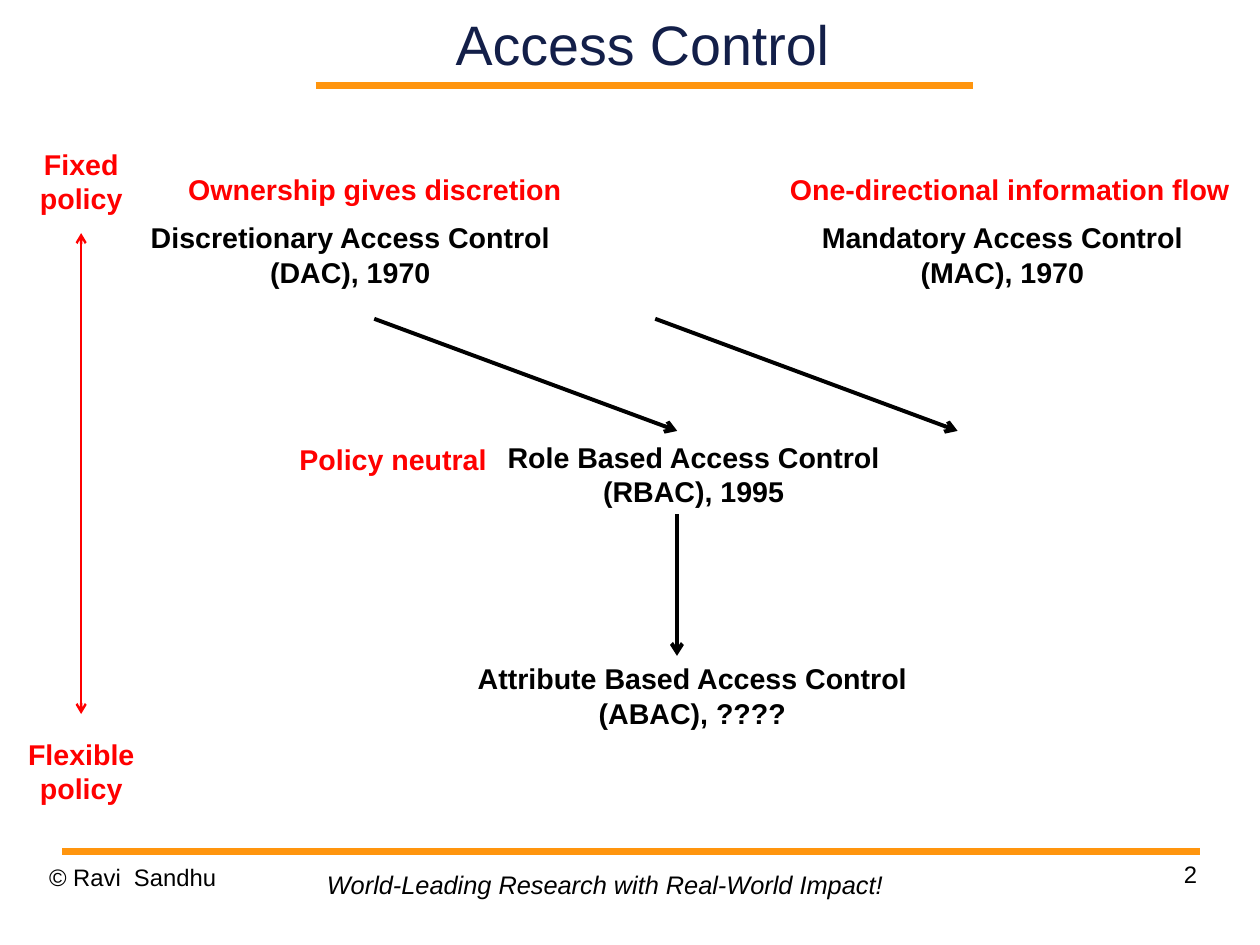
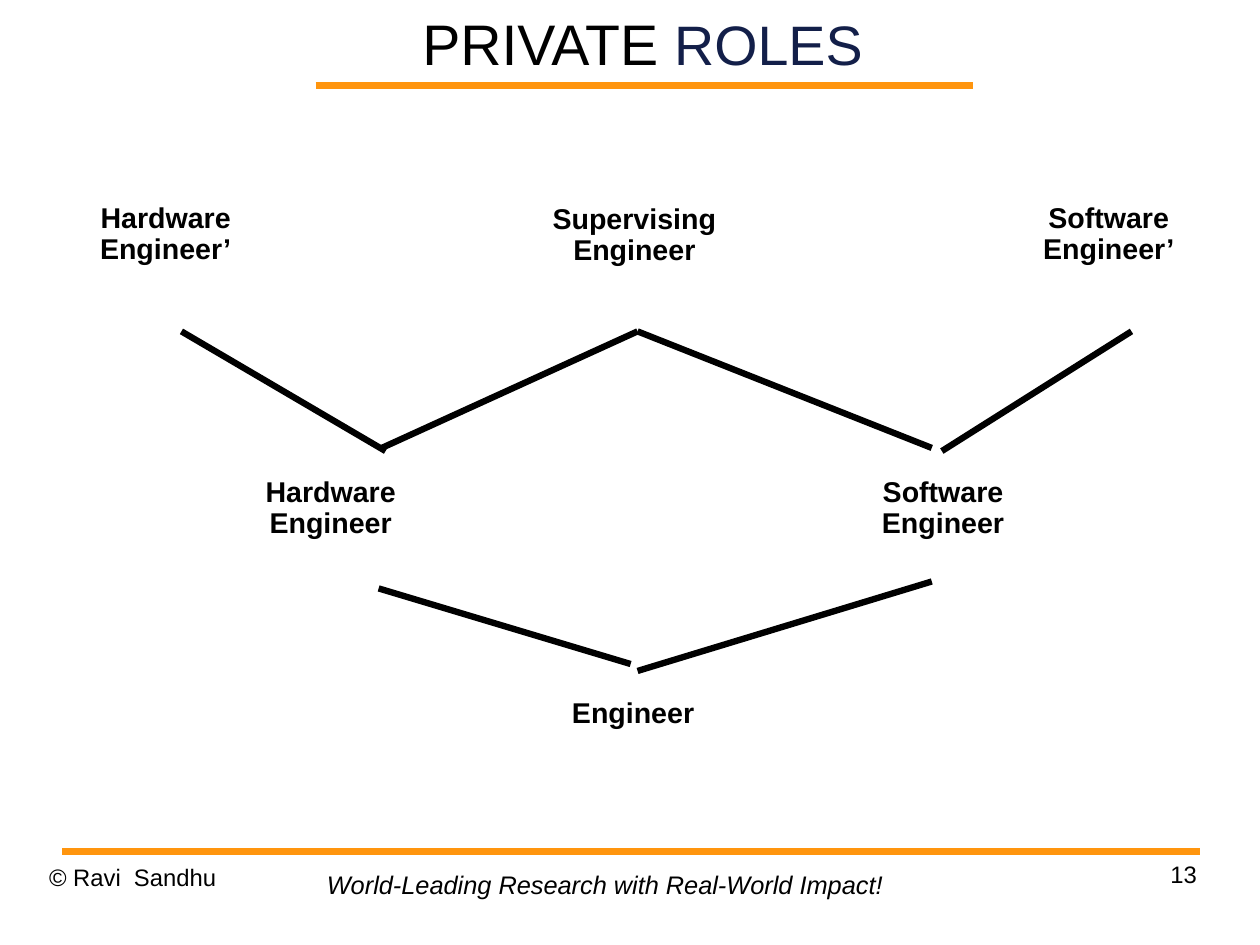
from pptx import Presentation
from pptx.dml.color import RGBColor
from pptx.enum.shapes import MSO_CONNECTOR as Connector
from pptx.enum.text import MSO_ANCHOR as Anchor, MSO_AUTO_SIZE as AutoSize, PP_ALIGN as Align
from pptx.oxml.ns import qn
from pptx.util import Cm, Inches, Pt
from lxml import etree

# Shared look: a grid of 100 columns by 75 rows
WIDTH, HEIGHT = Cm(28), Cm(21)
COLUMNS, ROWS = 100, 75
FONT = "Arial"
BLACK, RED, NAVY, ORANGE = "000000", "FF0000", "131F49", "FF950E"
TITLE_SIZE, LABEL_SIZE = 35, 18
TITLE_ONLY = 5


def color(hex_string):
    return RGBColor.from_string(hex_string)


def across(columns):
    return round(WIDTH * columns / COLUMNS)


def down(rows):
    return round(HEIGHT * rows / ROWS)


def style_font(font, size, hex_color, bold=False, italic=False):
    font.name, font.size = FONT, Pt(size)
    font.bold, font.italic = bold, italic
    font.color.rgb = color(hex_color)


def set_margins(frame, side=0.0, top=0.0):
    frame.margin_left = frame.margin_right = Inches(side)
    frame.margin_top = frame.margin_bottom = Inches(top)


def add_text(slide, lines, box, size, hex_color=BLACK, align=Align.LEFT, spacing=1.0,
             margins=(0, 0), wrap=True, bold=False, italic=False):
    """Place one paragraph per line in a box of (left, top, width, height) grid units."""
    left, top, width, height = box
    shape = slide.shapes.add_textbox(across(left), down(top), across(width), down(height))
    frame = shape.text_frame
    frame.word_wrap = wrap
    set_margins(frame, *margins)
    frame.text = "\n".join(lines)
    for paragraph in frame.paragraphs:
        paragraph.alignment = align
        paragraph.line_spacing = spacing
        style_font(paragraph.font, size, hex_color, bold, italic)


def add_label(slide, lines, center, top, width, hex_color=BLACK, spacing=1.0, wrap=False):
    """Place a bold label centred on a grid column."""
    line_count = 2 if wrap else len(lines)
    height = 0.8 + 2.8 * spacing * line_count
    add_text(slide, lines, (center - width / 2, top, width, height), LABEL_SIZE, hex_color,
             Align.CENTER, spacing, (0.1, 0.05), wrap, bold=True)


def add_line(slide, start, end, width, hex_color=BLACK, arrows=()):
    """Draw a straight line; arrows names the ends that carry an arrowhead."""
    connector = slide.shapes.add_connector(
        Connector.STRAIGHT, across(start[0]), down(start[1]), across(end[0]), down(end[1]))
    connector.line.width = Pt(width)
    connector.line.color.rgb = color(hex_color)
    for arrow in arrows:
        etree.SubElement(connector.line._get_or_add_ln(), qn(f"a:{arrow}"), type="arrow")
    etree.SubElement(connector._element.spPr, qn("a:effectLst"))


def add_title(slide, runs):
    """Fill the title placeholder from (text, size, colour) runs."""
    title = slide.shapes.title
    title.left, title.top = across(21.85), 0
    title.width, title.height = across(58.3), down(6.8)
    frame = title.text_frame
    frame.auto_size = AutoSize.NONE
    frame.word_wrap = True
    frame.vertical_anchor = Anchor.MIDDLE
    set_margins(frame)
    paragraph = frame.paragraphs[0]
    paragraph.alignment = Align.CENTER
    for text, size, hex_color in runs:
        run = paragraph.add_run()
        run.text = text
        style_font(run.font, size, hex_color)


def add_framed_slide(presentation, title_runs, number):
    """Start a slide with its title, orange rules and footer."""
    slide = presentation.slides.add_slide(presentation.slide_layouts[TITLE_ONLY])
    add_title(slide, title_runs)
    for left, right, row in ((25.05, 77.2, 6.8), (4.95, 95.25, 67.55)):
        add_line(slide, (left, row), (right, row), 4.31, ORANGE)
    add_text(slide, ["© Ravi  Sandhu"], (3.9, 68.45, 23.3, 5.2), 15, spacing=1.01)
    add_text(slide, [str(number)], (71.7, 68.25, 23.3, 5.2), 15, align=Align.RIGHT, spacing=1.01)
    add_text(slide, ["World-Leading Research with Real-World Impact!"],
             (25.05, 68.5, 47, 3.4), 16, margins=(0.1, 0.05), wrap=False, italic=True)
    return slide


def build_access_control(presentation):
    slide = add_framed_slide(presentation, [("Access Control", TITLE_SIZE, NAVY)], 2)

    # Access control models
    for text, center, top, width in (
            ("Discretionary Access Control (DAC), 1970", 27.8, 17.03, 34),
            ("Mandatory Access Control (MAC), 1970", 79.55, 17.05, 34),
            ("Role Based Access Control (RBAC), 1995", 55.05, 34.45, 34),
            ("Attribute Based Access Control (ABAC), ????", 54.95, 52.05, 37.3)):
        add_label(slide, [text], center, top, width, wrap=True)

    # Arrows between the models
    for start, end in (((29.7, 25.3), (53.75, 34.2)),
                       ((52, 25.3), (76, 34.2)),
                       ((53.73, 40.8), (53.73, 52.05))):
        add_line(slide, start, end, 2.5, arrows=["tailEnd"])

    # Policy scale and remarks
    add_line(slide, (6.44, 18.5), (6.44, 56.67), 1.5, RED, ["headEnd", "tailEnd"])
    for lines, center, top, width in (
            (["Fixed", "policy"], 6.45, 11.2, 8.4),
            (["Flexible", "policy"], 6.45, 58.05, 10.3),
            (["Ownership gives discretion"], 29.75, 13.2, 31.8),
            (["One-directional information flow"], 80.15, 13.2, 38.4),
            (["Policy neutral"], 31.2, 34.65, 16.9)):
        add_label(slide, lines, center, top, width, RED)


def build_private_roles(presentation):
    slide = add_framed_slide(
        presentation, [("PRIVATE ", 36, BLACK), ("ROLES", TITLE_SIZE, NAVY)], 13)

    # Roles
    for lines, center, top in (
            (["Hardware", "Engineer’"], 13.15, 15.7),
            (["Supervising", "Engineer"], 50.35, 15.8),
            (["Software", "Engineer’"], 88, 15.7),
            (["Hardware", "Engineer"], 26.25, 37.45),
            (["Software", "Engineer"], 74.85, 37.45),
            (["Engineer"], 50.25, 55.05)):
        add_label(slide, lines, center, top, 15, spacing=0.9)

    # Role hierarchy, from senior to junior
    for start, end in (((14.4, 26.3), (30.6, 35.8)),
                       ((50.6, 26.3), (30.3, 35.55)),
                       ((50.6, 26.3), (73.95, 35.55)),
                       ((89.8, 26.3), (74.75, 35.8)),
                       ((30.05, 46.7), (50.05, 52.7)),
                       ((73.95, 46.15), (50.6, 53.25))):
        add_line(slide, start, end, 4)


def main():
    presentation = Presentation()
    presentation.slide_width, presentation.slide_height = WIDTH, HEIGHT
    build_access_control(presentation)
    build_private_roles(presentation)
    presentation.save("out.pptx")


if __name__ == "__main__":
    main()
